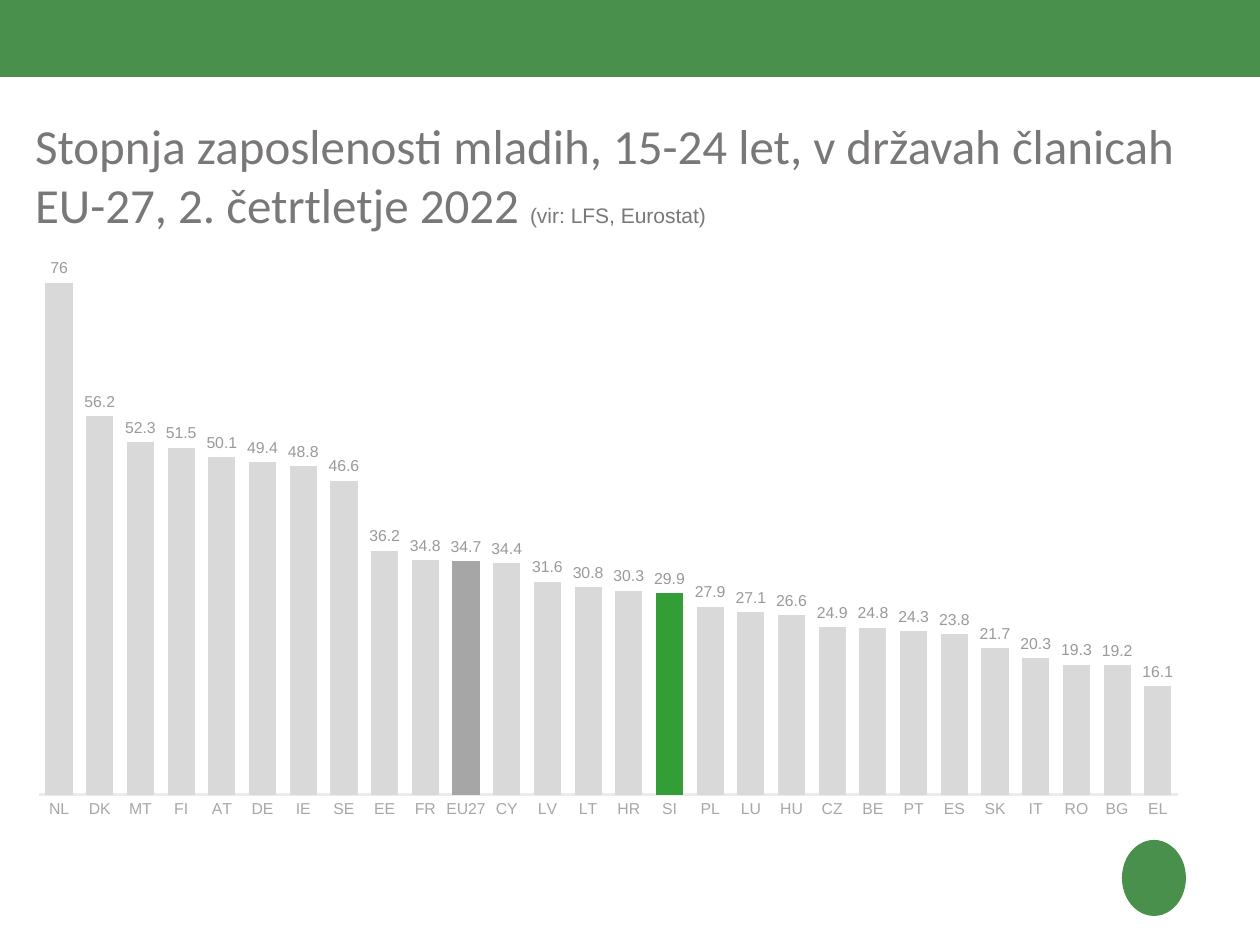
from lxml.etree import SubElement
from pptx import Presentation
from pptx.chart.data import CategoryChartData
from pptx.dml.color import RGBColor
from pptx.enum.chart import XL_CHART_TYPE, XL_LABEL_POSITION, XL_TICK_LABEL_POSITION, XL_TICK_MARK
from pptx.enum.shapes import MSO_SHAPE
from pptx.enum.text import MSO_ANCHOR, MSO_AUTO_SIZE, PP_ALIGN
from pptx.oxml.ns import qn
from pptx.util import Emu, Pt

COLORS = {
    "brand": "49904D", "title": "797777", "axis": "A8A7A7", "line": "EBEBEB",
    "label": "9B9999", "bar": "D9D9D9", "EU27": "A6A6A6", "SI": "339E35",
    "back": "FFFFFF",
}
RATES = {
    "NL": 76, "DK": 56.2, "MT": 52.3, "FI": 51.5, "AT": 50.1, "DE": 49.4, "IE": 48.8,
    "SE": 46.6, "EE": 36.2, "FR": 34.8, "EU27": 34.7, "CY": 34.4, "LV": 31.6, "LT": 30.8,
    "HR": 30.3, "SI": 29.9, "PL": 27.9, "LU": 27.1, "HU": 26.6, "CZ": 24.9, "BE": 24.8,
    "PT": 24.3, "ES": 23.8, "SK": 21.7, "IT": 20.3, "RO": 19.3, "BG": 19.2, "EL": 16.1,
}
HIGHLIGHTS = ("EU27", "SI")


def px(n):
    """Turn pixels, 126 to the inch, into EMU."""
    return Emu(round(n * 914400 / 126))


def color(name):
    """Look up a named colour."""
    return RGBColor.from_string(COLORS[name])


def set_font(font, size, name, face="Arial"):
    """Set size, colour and typeface."""
    font.size = Pt(size)
    font.name = face
    font.bold = False
    font.color.rgb = color(name)


def set_fill(fill, name):
    """Apply a solid named colour."""
    fill.solid()
    fill.fore_color.rgb = color(name)


def add_block(s, kind, x, y, w, h):
    """Add a plain brand-coloured shape."""
    sp = s.shapes.add_shape(kind, px(x), px(y), px(w), px(h))
    sp.shadow.inherit = False
    set_fill(sp.fill, "brand")
    sp.line.fill.background()


def set_title(s, x, y, w, h, runs):
    """Place the title and write its runs of text, size and face."""
    sp = s.shapes.title
    sp.left, sp.top, sp.width, sp.height = px(x), px(y), px(w), px(h)
    tf = sp.text_frame
    tf.margin_left = tf.margin_top = tf.margin_right = tf.margin_bottom = 0
    tf.word_wrap = True
    tf.auto_size = MSO_AUTO_SIZE.NONE
    tf.vertical_anchor = MSO_ANCHOR.TOP
    p = tf.paragraphs[0]
    p.alignment = PP_ALIGN.LEFT
    for text, size, face in runs:
        r = p.add_run()
        r.text = text
        set_font(r.font, size, "title", face)


def set_plot_layout(chart, **box):
    """Fix the inner plot area as fractions of the chart."""
    area = chart._chartSpace.chart.plotArea
    layout = area.find(qn("c:layout"))
    if layout is None:
        layout = SubElement(area, qn("c:layout"))
        area.insert(0, layout)
    manual = SubElement(layout, qn("c:manualLayout"))
    values = {"layoutTarget": "inner", "xMode": "edge", "yMode": "edge", **box}
    for tag, value in values.items():
        SubElement(manual, qn(f"c:{tag}")).set("val", str(value))


def format_axes(chart):
    """Show only the category labels and their base line."""
    cat, val = chart.category_axis, chart.value_axis
    for axis in (cat, val):
        axis.major_tick_mark = axis.minor_tick_mark = XL_TICK_MARK.NONE
        axis.has_major_gridlines = False
        set_font(axis.tick_labels.font, 9, "axis")
    cat.format.line.color.rgb = color("line")
    cat.format.line.width = Pt(1.5)
    val.minimum_scale, val.maximum_scale = 0, 80
    val.tick_label_position = XL_TICK_LABEL_POSITION.NONE
    val.format.line.fill.background()


def format_bars(plot):
    """Colour the bars, pick out the highlights and label the values."""
    plot.gap_width, plot.overlap = 50, -27
    plot.vary_by_categories = False
    series = plot.series[0]
    series.invert_if_negative = False
    set_fill(series.format.fill, "bar")
    for name in HIGHLIGHTS:
        set_fill(series.points[list(RATES).index(name)].format.fill, name)
    plot.has_data_labels = True
    labels = plot.data_labels
    labels.show_value = True
    labels.position = XL_LABEL_POSITION.OUTSIDE_END
    labels.number_format, labels.number_format_is_linked = "General", False
    set_font(labels.font, 9, "label")


def add_rates_chart(s, x, y, w, h):
    """Add the column chart of employment rates."""
    data = CategoryChartData()
    data.categories = list(RATES)
    data.add_series("Series 1", list(RATES.values()))
    frame = s.shapes.add_chart(XL_CHART_TYPE.COLUMN_CLUSTERED, px(x), px(y), px(w), px(h), data)
    chart = frame.chart
    chart.has_legend = chart.has_title = False
    set_font(chart.font, 10, "title")
    format_axes(chart)
    format_bars(chart.plots[0])
    set_plot_layout(chart, x=0.02, y=0.02, w=0.96, h=0.92)


def main():
    """Build and save the slide."""
    prs = Presentation()
    prs.slide_width, prs.slide_height = px(1260), px(945)
    s = prs.slides.add_slide(prs.slide_layouts[5])
    set_fill(s.background.fill, "back")
    add_block(s, MSO_SHAPE.RECTANGLE, 0, -1, 1260, 78)
    add_block(s, MSO_SHAPE.OVAL, 1122, 840, 64, 76)
    set_title(s, 35, 116, 1167, 89, [
        ("Stopnja zaposlenosti mladih, 15-24 let, v državah članicah EU-27, 2. četrtletje 2022 ", 28, "Calibri"),
        ("(vir: LFS, Eurostat)", 12, "Arial"),
    ])
    add_rates_chart(s, 15, 244, 1187, 586)
    prs.save("out.pptx")


if __name__ == "__main__":
    main()
